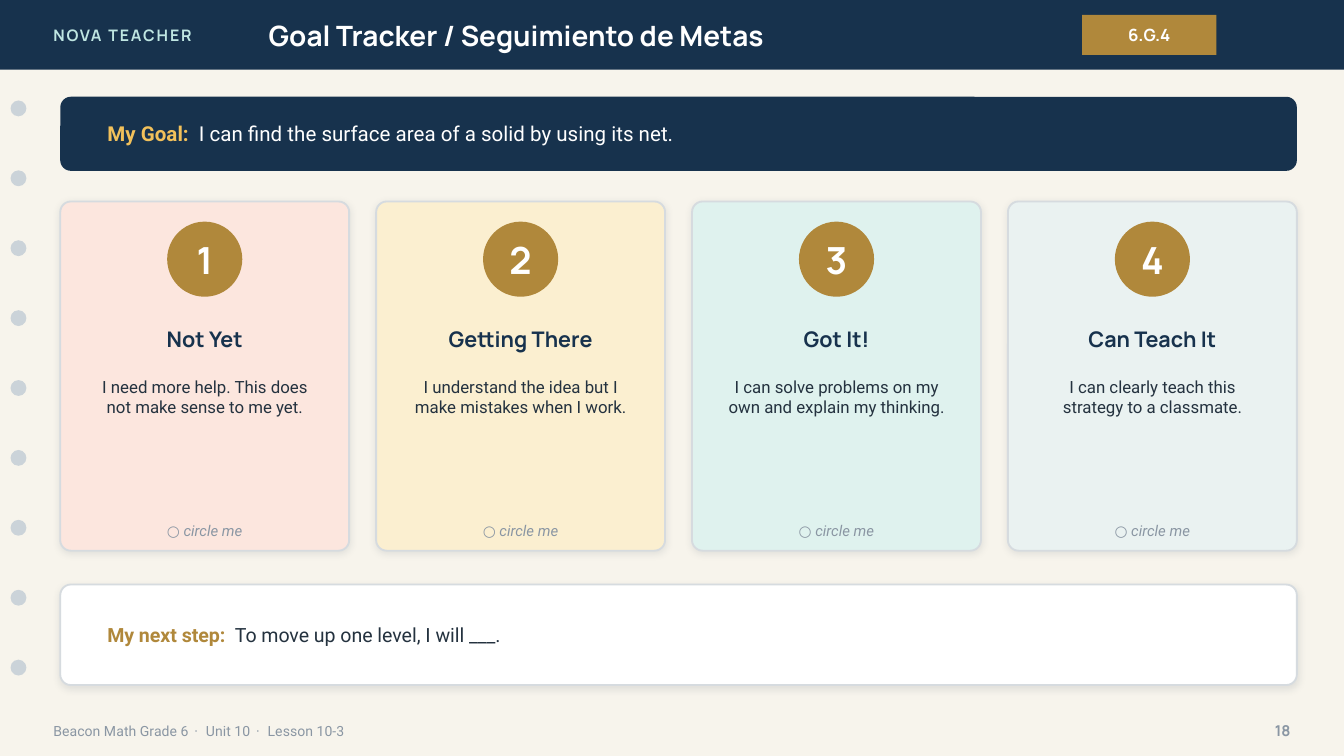
from dataclasses import dataclass, field

from lxml import etree
from pptx import Presentation
from pptx import util as u
from pptx.dml.color import RGBColor
from pptx.enum import shapes, text
from pptx.oxml import ns

KIND = shapes.MSO_SHAPE
ALIGN = text.PP_ALIGN
MID, TOP = text.MSO_ANCHOR.MIDDLE, text.MSO_ANCHOR.TOP


@dataclass
class Theme:
    cream: str = "F7F4EC"
    navy: str = "17324D"
    gold: str = "B0883B"
    amber: str = "F2C15B"
    white: str = "FFFFFF"
    mint: str = "BFE6E2"
    dot: str = "CBD3D9"
    grey: str = "8A96A3"
    ink: str = "24323F"
    edge: str = "D6DBDF"
    shade: str = "1C2E42"
    round: float = 0.2  # corner radius, cm
    fonts: dict = field(default_factory=lambda: {
        "brand": dict(name="Manrope", size=u.Pt(8.5), bold=True),
        "title": dict(name="Manrope", size=u.Pt(15), bold=True),
        "badge": dict(name="Manrope", size=u.Pt(9), bold=True),
        "level": dict(name="Manrope", size=u.Pt(20), bold=True),
        "head": dict(name="Manrope", size=u.Pt(11.5), bold=True),
        "page": dict(name="Manrope", size=u.Pt(8), bold=True),
        "body": dict(name="Roboto", size=u.Pt(9)),
        "hint": dict(name="Roboto", size=u.Pt(8), italic=True),
        "foot": dict(name="Roboto", size=u.Pt(7.5)),
        "goal": dict(name="Roboto", size=u.Pt(11)),
        "step": dict(name="Roboto", size=u.Pt(10.5)),
    })


T = Theme()


def place(box):
    return [u.Cm(v) for v in box]


def rgb(code):
    return RGBColor.from_string(code)


def sub(node, tag, **attrs):
    return etree.SubElement(node, ns.qn(tag), attrs)


def write(shape, runs, style, align=ALIGN.LEFT, anchor=MID, tab=None):
    """Fill one paragraph with runs of (words, colour, extra font values, spacing)."""
    frame = shape.text_frame
    frame.word_wrap = True
    frame.vertical_anchor = anchor
    para = frame.paragraphs[0]
    para.alignment = align
    if tab:
        tabs = sub(para._p.get_or_add_pPr(), "a:tabLst")
        sub(tabs, "a:tab", pos=str(u.Cm(tab)), algn="l")
    for words, color, extra, space in runs:
        run = para.add_run()
        run.text = words
        for key, val in {**T.fonts[style], **extra}.items():
            setattr(run.font, key, val)
        run.font.color.rgb = rgb(color)
        if space:
            run._r.get_or_add_rPr().set("spc", str(space))


def label(slide, box, words, style, color, space=0, **fmt):
    area = slide.shapes.add_textbox(*place(box))
    write(area, [(words, color, {}, space)], style, **fmt)


def block(slide, kind, box, fill):
    shape = slide.shapes.add_shape(kind, *place(box))
    shape.shadow.inherit = False
    shape.fill.solid()
    shape.fill.fore_color.rgb = rgb(fill)
    shape.line.fill.background()
    return shape


def panel(slide, box, fill, raised=True):
    """Rounded panel; a raised one has an edge and a soft shadow."""
    shape = block(slide, KIND.ROUNDED_RECTANGLE, box, fill)
    shape.adjustments[0] = T.round / min(box[2:])
    if raised:
        shape.line.color.rgb = rgb(T.edge)
        shape.line.width = u.Pt(1)
        effect = shape._element.spPr.find(ns.qn("a:effectLst"))
        soft = sub(effect, "a:outerShdw", blurRad=str(u.Pt(4)), dist=str(u.Pt(1)),
                   dir="5400000", algn="bl", rotWithShape="0")
        sub(sub(soft, "a:srgbClr", val=T.shade), "a:alpha", val="10000")


def header(slide, box):
    x, y, w, h = box
    block(slide, KIND.RECTANGLE, box, T.navy)
    label(slide, (x + 0.76, y, 6.1, h), "NOVA TEACHER", "brand", T.mint, space=100)
    label(slide, (x + 4.83, y, 14.22, h), "Goal Tracker / Seguimiento de Metas",
          "title", T.white)
    badge = block(slide, KIND.RECTANGLE, (x + 20.45, y + 0.28, 2.54, 0.76), T.gold)
    write(badge, [("6.G.4", T.white, {}, 0)], "badge", ALIGN.CENTER)


def holes(slide, box, count=9):
    x, y, size, h = box
    step = (h - size) / (count - 1)
    for i in range(count):
        block(slide, KIND.OVAL, (x, y + i * step, size, size), T.dot)


def prompt(slide, box, style, fill, lead, rest, tab, raised):
    """Wide panel with a bold lead and one sentence; lead and rest are (words, colour)."""
    x, y, w, h = box
    panel(slide, box, fill, raised)
    area = slide.shapes.add_textbox(*place((x + 0.64, y, w - 1.28, h)))
    runs = [(lead[0] + "\t", lead[1], {"bold": True}, 0), (*rest, {}, 0)]
    write(area, runs, style, tab=tab)


def card(slide, box, level, fill, head, body):
    x, y, w, h = box
    disc = 1.42
    panel(slide, box, fill)
    spot = block(slide, KIND.OVAL, (x + (w - disc) / 2, y + 0.38, disc, disc), T.gold)
    for side in ("left", "right", "top", "bottom"):
        setattr(spot.text_frame, "margin_" + side, 0)
    write(spot, [(str(level), T.white, {}, 0)], "level", ALIGN.CENTER)
    # Rows: inset from the card, top, height, words and look
    rows = [
        (0.13, 2.16, 0.89, head, "head", T.navy, MID),
        (0.3, 3.18, 2.92, body, "body", T.ink, TOP),
        (0.13, h - 0.63, 0.51, "○ circle me", "hint", T.grey, MID),
    ]
    for inset, top, tall, words, style, color, anchor in rows:
        label(slide, (x + inset, y + top, w - 2 * inset, tall), words, style, color,
              align=ALIGN.CENTER, anchor=anchor)


def levels(slide, box, cards):
    x, y, w, h = box
    gap = 0.51
    wide = (w - gap * (len(cards) - 1)) / len(cards)
    for i, item in enumerate(cards):
        card(slide, (x + i * (wide + gap), y, wide, h), i + 1, *item)


def footer(slide, box):
    x, y, w, h = box
    area = slide.shapes.add_textbox(*place((x, y, 17.78, h)))
    runs = []
    for part in ("Beacon Math Grade 6", "Unit 10", "Lesson 10-3"):
        if runs:
            runs.append((" · ", T.grey, {}, 120))
        runs.append((part, T.grey, {}, 0))
    write(area, runs, "foot")
    label(slide, (x + w - 1.27, y, 1.27, h), "18", "page", T.grey, align=ALIGN.RIGHT)


def main():
    deck = Presentation()
    deck.slide_width, deck.slide_height = u.Cm(25.4), u.Cm(14.29)
    slide = deck.slides.add_slide(deck.slide_layouts[6])
    slide.background.fill.solid()
    slide.background.fill.fore_color.rgb = rgb(T.cream)
    left, wide = 1.14, 23.37

    # Frame of the page
    header(slide, (0, 0, 25.4, 1.32))
    holes(slide, (0.2, 1.9, 0.3, 10.87))
    footer(slide, (0.76, 13.46, 23.88, 0.71))

    # Goal, four levels and next step
    prompt(slide, (left, 1.83, wide, 1.4), "goal", T.navy, ("My Goal:", T.amber),
           ("I can find the surface area of a solid by using its net.", T.white),
           1.73, False)
    levels(slide, (left, 3.81, wide, 6.6), [
        ("FCE6DE", "Not Yet", "I need more help. This does not make sense to me yet."),
        ("FBEFD0", "Getting There",
         "I understand the idea but I make mistakes when I work."),
        ("DFF2EE", "Got It!",
         "I can solve problems on my own and explain my thinking."),
        ("EAF2F1", "Can Teach It",
         "I can clearly teach this strategy to a classmate."),
    ])
    prompt(slide, (left, 11.05, wide, 1.9), "step", T.white,
           ("My next step:", T.gold),
           ("To move up one level, I will ___.", T.ink), 2.41, True)

    deck.save("out.pptx")


if __name__ == "__main__":
    main()
